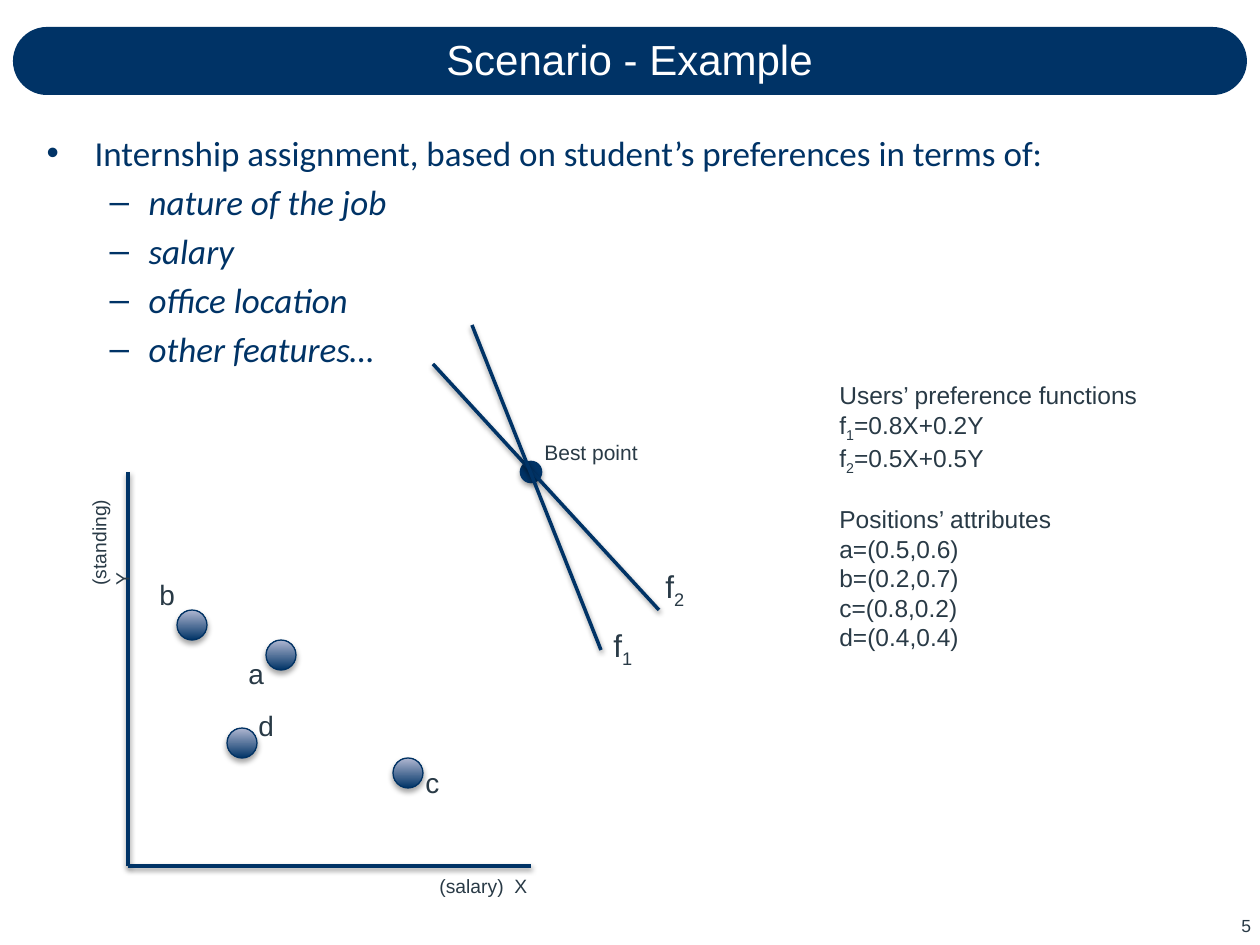
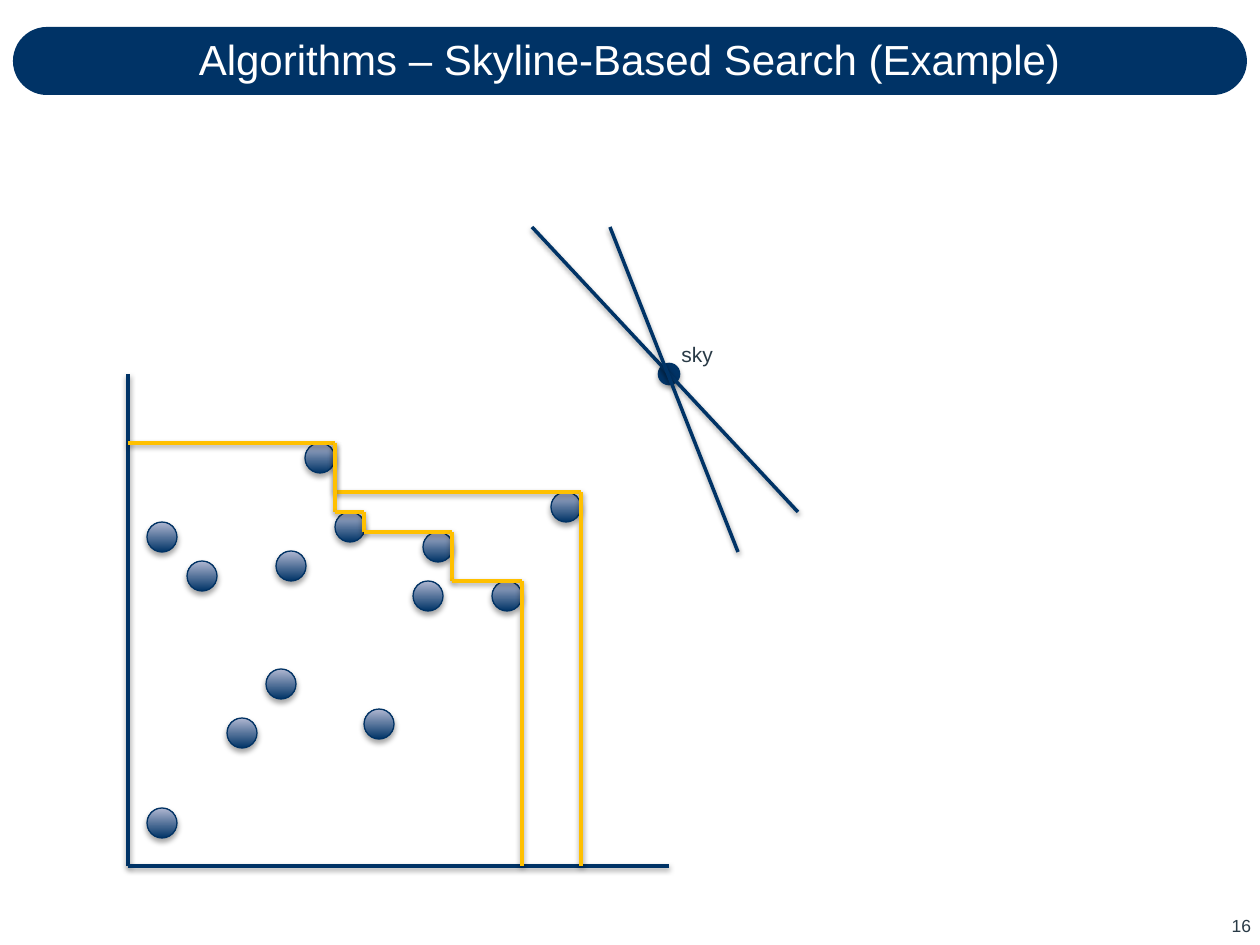
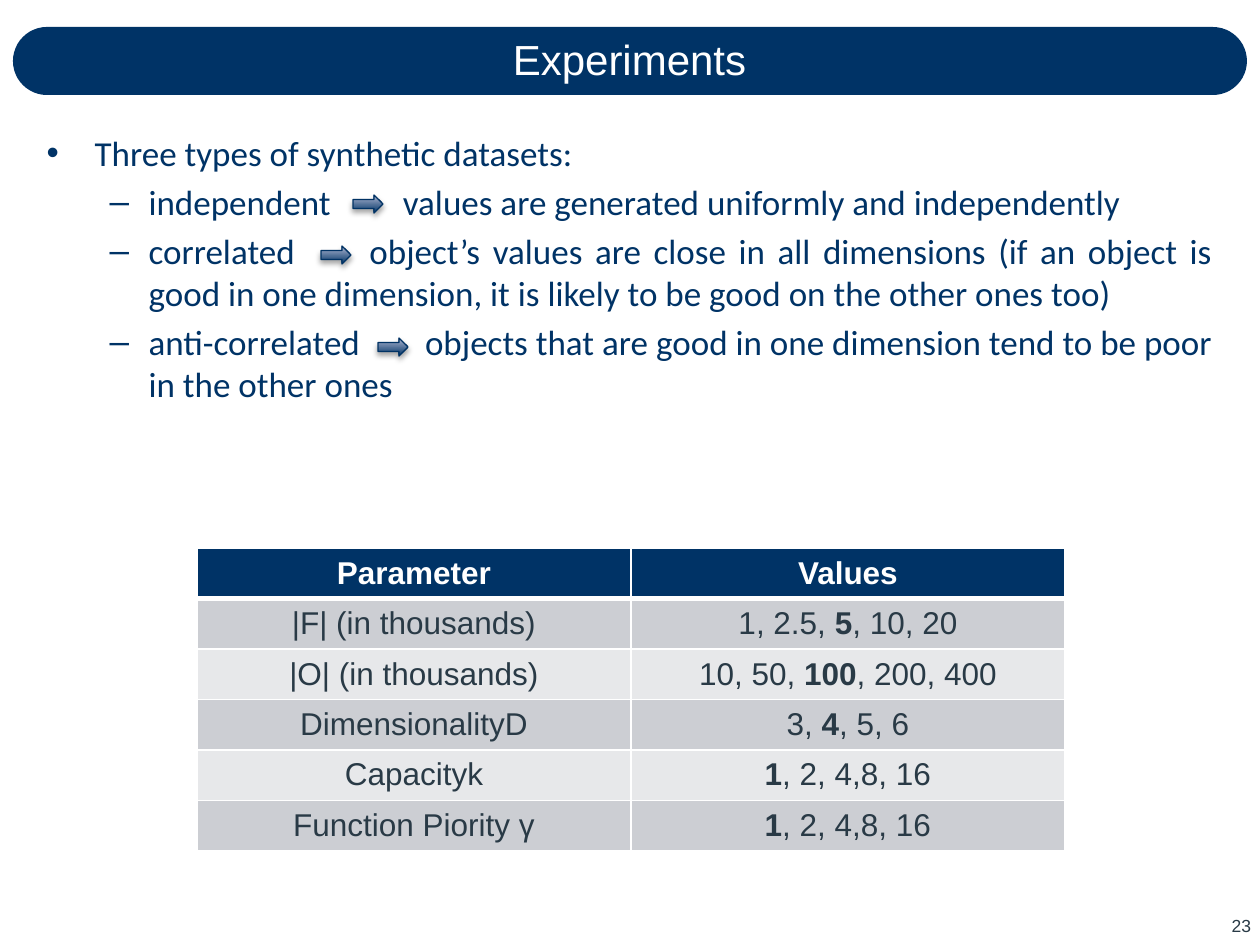
"""Build three slides on preference search: scenario, skyline and experiments."""
from dataclasses import dataclass
from itertools import pairwise

from lxml import etree
from pptx import Presentation
from pptx.dml.color import RGBColor
from pptx.enum.shapes import MSO_CONNECTOR, MSO_SHAPE
from pptx.enum.text import MSO_ANCHOR, MSO_AUTO_SIZE, PP_ALIGN
from pptx.oxml.ns import qn
from pptx.util import Emu, Pt

NAVY, EDGE, PALE, GOLD = "003366", "003264", "B1B8D2", "FFC000"
INK, WHITE, BANDS = "293A46", "FFFFFF", ("E7E8EA", "CCCED3")
SANS, HUMAN = "Arial", "Calibri"
LEFT, MID, RIGHT, JUST = PP_ALIGN.LEFT, PP_ALIGN.CENTER, PP_ALIGN.RIGHT, PP_ALIGN.JUSTIFY
MIDDLE, FIXED, GROW = MSO_ANCHOR.MIDDLE, MSO_AUTO_SIZE.NONE, MSO_AUTO_SIZE.SHAPE_TO_FIT_TEXT
OVAL, ARROW, PILL = MSO_SHAPE.OVAL, MSO_SHAPE.RIGHT_ARROW, MSO_SHAPE.ROUNDED_RECTANGLE
STRAIGHT = MSO_CONNECTOR.STRAIGHT
SCALE = 914400 / 126
DOT = 30
ORIGIN = (128, 866)


@dataclass(frozen=True)
class Bit:
    text: str
    sub: bool = False
    bold: bool = False
    gap: int = 0


@dataclass(frozen=True)
class Label:
    text: list
    box: tuple[int, int, int, int]
    size: int
    wrap: bool = False
    upright: bool = False


@dataclass(frozen=True)
class Plot:
    top: int
    right: int
    best: tuple[int, int]
    dots: list
    rays: list


def px(num: int) -> Emu:
    return Emu(round(num * SCALE))


def place(shape, box: tuple[int, int, int, int]) -> None:
    shape.left, shape.top, shape.width, shape.height = map(px, box)


def rgb(hue: str) -> RGBColor:
    return RGBColor.from_string(hue)


def write(frame, text, *, size=18, font=SANS, hue=INK, bold=False, align=LEFT) -> None:
    paras = [text] if isinstance(text, str) else text
    for num, bits in enumerate(paras):
        para = frame.add_paragraph() if num else frame.paragraphs[0]
        para.alignment = align
        for bit in [Bit(bits)] if isinstance(bits, str) else bits:
            run = para.add_run()
            run.text = bit.text
            face = run.font
            face.size, face.name = Pt(size), font
            face.bold = bold or bit.bold
            face.color.rgb = rgb(hue)
            props = run._r.get_or_add_rPr()
            if bit.sub:
                props.set("baseline", "-25000")
            if bit.gap:
                props.set("spc", str(bit.gap))


def shade(shape, alpha: int, drop: float) -> None:
    props = shape._element.spPr
    for old in props.findall(qn("a:effectLst")):
        props.remove(old)
    fx = etree.SubElement(props, qn("a:effectLst"))
    cast = etree.SubElement(fx, qn("a:outerShdw"), blurRad=str(Pt(3.1)),
                            dist=str(Pt(drop)), dir="5400000", rotWithShape="0")
    tone = etree.SubElement(cast, qn("a:srgbClr"), val="000000")
    etree.SubElement(tone, qn("a:alpha"), val=str(alpha * 1000))


def solid(slide, kind, box: tuple[int, int, int, int], hue: str):
    shape = slide.shapes.add_shape(kind, *map(px, box))
    shape.shadow.inherit = False
    shape.fill.solid()
    shape.fill.fore_color.rgb = rgb(hue)
    return shape


def glossy(slide, kind, box: tuple[int, int, int, int]) -> None:
    shape = solid(slide, kind, box, NAVY)
    shape.fill.gradient()
    shape.fill.gradient_angle = 90
    for stop, hue in zip(shape.fill.gradient_stops, (NAVY, PALE)):
        stop.color.rgb = rgb(hue)
    shape.line.color.rgb = rgb(EDGE)
    shape.line.width = Pt(0.75)
    shade(shape, 35, 1.8)


def trace(slide, points: list, hue: str = NAVY) -> None:
    for start, end in pairwise(points):
        line = slide.shapes.add_connector(STRAIGHT, *map(px, start + end))
        line.line.color.rgb = rgb(hue)
        line.line.width = Pt(2)
        shade(line, 38, 1.6)


def chart(slide, plot: Plot) -> None:
    x, y = plot.best
    best = solid(slide, OVAL, (x - 10, y - 10, 20, 20), NAVY)
    best.line.color.rgb = rgb(NAVY)
    best.line.width = Pt(1.5)
    shade(best, 35, 1.8)
    trace(slide, [(ORIGIN[0], plot.top), ORIGIN, (plot.right, ORIGIN[1])])
    for spot in plot.dots:
        glossy(slide, OVAL, (*spot, DOT, DOT))
    for ray in plot.rays:
        trace(slide, ray)


def note(slide, label: Label):
    box = slide.shapes.add_textbox(*map(px, label.box))
    frame = box.text_frame
    frame.word_wrap = label.wrap
    frame.auto_size = GROW
    if label.upright:
        frame._txBody.bodyPr.set("vert", "vert270")
    write(frame, label.text, size=label.size)
    return frame


def start(deck, layout: int, title: str, page: str):
    slide = deck.slides.add_slide(deck.slide_layouts[layout])
    head = slide.shapes.title
    place(head, (92, 18, 1075, 81))
    head.text_frame.auto_size = FIXED
    head.text_frame.vertical_anchor = MIDDLE
    write(head.text_frame, title, size=24, hue=WHITE, align=MID)
    foot = slide.shapes.add_textbox(*map(px, (1206, 915, 45, 25))).text_frame
    foot.word_wrap = True
    foot.margin_left = foot.margin_right = foot.margin_top = foot.margin_bottom = 0
    write(foot, page, size=10, align=RIGHT)
    return slide


def add_band(deck, slide) -> None:
    band = solid(slide, PILL, (13, 27, 1234, 68), NAVY)
    band.adjustments[0] = 0.5
    band.line.fill.background()
    band._element.nvSpPr.cNvPr.set("id", "99")
    deck.slide_master.element.cSld.spTree.insert(2, band._element)


def add_list(slide, items: list, tall: int, slant: bool = False) -> None:
    body = slide.placeholders[1]
    place(body, (34, 125, 1191, tall))
    frame = body.text_frame
    frame.auto_size = FIXED
    write(frame, items, size=20, font=HUMAN, hue=NAVY, align=JUST)
    for num, para in enumerate(frame.paragraphs):
        props = para._p.get_or_add_pPr()
        para.level = min(num, 1)
        left, hang = (102, 39) if num else (48, 48)
        props.set("marL", str(px(left)))
        props.set("indent", str(px(-hang)))
        if num and slant:
            for run in para.runs:
                run.font.italic = True
    frame.paragraphs[0].space_before = Pt(0)


def edge(cell, head: bool) -> None:
    props = cell._tc.get_or_add_tcPr()
    for side in "LRTB":
        wide = 3 if head and side == "B" else 1
        line = etree.SubElement(props, qn(f"a:ln{side}"), w=str(Pt(wide)))
        fill = etree.SubElement(line, qn("a:solidFill"))
        etree.SubElement(fill, qn("a:srgbClr"), val=WHITE)


def add_grid(slide, rows: list) -> None:
    wide, tall = 434, 50
    box = (197, 548, wide * 2, tall * len(rows))
    grid = slide.shapes.add_table(len(rows), 2, *map(px, box)).table
    for num, row in enumerate(rows):
        head = num == 0
        for col, text in enumerate(row):
            cell = grid.cell(num, col)
            edge(cell, head)
            cell.fill.solid()
            cell.fill.fore_color.rgb = rgb(NAVY if head else BANDS[num % 2])
            cell.vertical_anchor = MIDDLE
            write(cell.text_frame, [text], hue=WHITE if head else INK, bold=head, align=MID)


def scenario(deck) -> None:
    slide = start(deck, 1, "Scenario - Example", "5")
    add_band(deck, slide)
    add_list(slide, ["Internship assignment, based on student’s preferences in terms of:",
                     "nature of the job", "salary", "office location", "other features…"],
             268, slant=True)
    chart(slide, Plot(472, 531, (531, 472),
                      [(177, 610), (227, 728), (266, 640), (393, 758)],
                      [[(433, 364), (659, 610)], [(472, 325), (601, 650)]]))
    one, two, gap = Bit("1", sub=True), Bit("2", sub=True), Bit(" ", gap=300)
    for label in (
        Label("Best point", (532, 433, 147, 38), 12, wrap=True),
        Label("b", (147, 571, 42, 47), 16),
        Label("a", (236, 650, 39, 81), 16, wrap=True),
        Label("d", (246, 702, 42, 47), 16),
        Label("c", (413, 759, 39, 47), 16),
        Label([[Bit("f"), one]], (601, 620, 45, 50), 18),
        Label([[Bit("f"), two]], (653, 561, 45, 50), 18),
        Label([[Bit("(salary)"), gap, Bit("X")]], (427, 868, 117, 37), 11, wrap=True),
        Label([[Bit("(standing)"), gap, Bit("Y")]], (81, 472, 49, 126), 11,
              wrap=True, upright=True),
    ):
        note(slide, label)
    facts = note(slide, Label(
        ["Users’ preference functions", [Bit("f"), one, Bit("=0.8X+0.2Y")],
         [Bit("f"), two, Bit("=0.5X+0.5Y")], "Positions’ attributes",
         "a=(0.5,0.6)", "b=(0.2,0.7)", "c=(0.8,0.2)", "d=(0.4,0.4)"],
        (827, 374, 325, 280), 14))
    facts.paragraphs[3].space_before = Pt(16)


def skyline(deck) -> None:
    slide = start(deck, 5, "Algorithms – Skyline-Based Search (Example)", "16")
    chart(slide, Plot(374, 669, (669, 374),
                      [(147, 808), (147, 522), (187, 561), (227, 718), (266, 669),
                       (276, 551), (335, 512), (305, 443), (423, 532), (551, 492),
                       (413, 581), (492, 581), (364, 709)],
                      [[(532, 227), (798, 512)], [(610, 227), (738, 552)]]))
    trace(slide, [(128, 443), (335, 443), (335, 492), (581, 492), (581, 866)], GOLD)
    trace(slide, [(335, 443), (335, 512), (364, 512), (364, 532), (452, 532),
                  (452, 581), (522, 581), (522, 866)], GOLD)
    note(slide, Label("sky", (669, 335, 59, 38), 12, wrap=True))


def trials(deck) -> None:
    slide = start(deck, 1, "Experiments", "23")
    kinds = [
        ("independent", 3660, "values are generated uniformly and independently"),
        ("correlated", 3540, "object’s values are close in all dimensions (if an object is "
         "good in one dimension, it is likely to be good on the other ones too)"),
        ("anti-correlated", 3260, "objects that are good in one dimension tend to be poor "
         "in the other ones"),
    ]
    add_list(slide, ["Three types of synthetic datasets:"]
             + [[Bit(name), Bit(" ", gap=gap), Bit(text)] for name, gap, text in kinds], 375)
    powers = [Bit("1", bold=True), Bit(", 2, 4,8, 16")]
    add_grid(slide, [
        ("Parameter", "Values"),
        ("|F| (in thousands)", [Bit("1, 2.5, "), Bit("5", bold=True), Bit(", 10, 20")]),
        ("|O| (in thousands)", [Bit("10, 50, "), Bit("100", bold=True), Bit(", 200, 400")]),
        ("DimensionalityD", [Bit("3, "), Bit("4", bold=True), Bit(", 5, 6")]),
        ("Capacityk", powers),
        ("Function Piority γ", powers),
    ])
    for spot in ((353, 195), (321, 246), (378, 338)):
        glossy(slide, ARROW, (*spot, DOT, 18))


def main() -> None:
    deck = Presentation()
    deck.slide_width, deck.slide_height = px(1260), px(945)
    scenario(deck)
    skyline(deck)
    trials(deck)
    deck.save("out.pptx")


if __name__ == "__main__":
    main()
